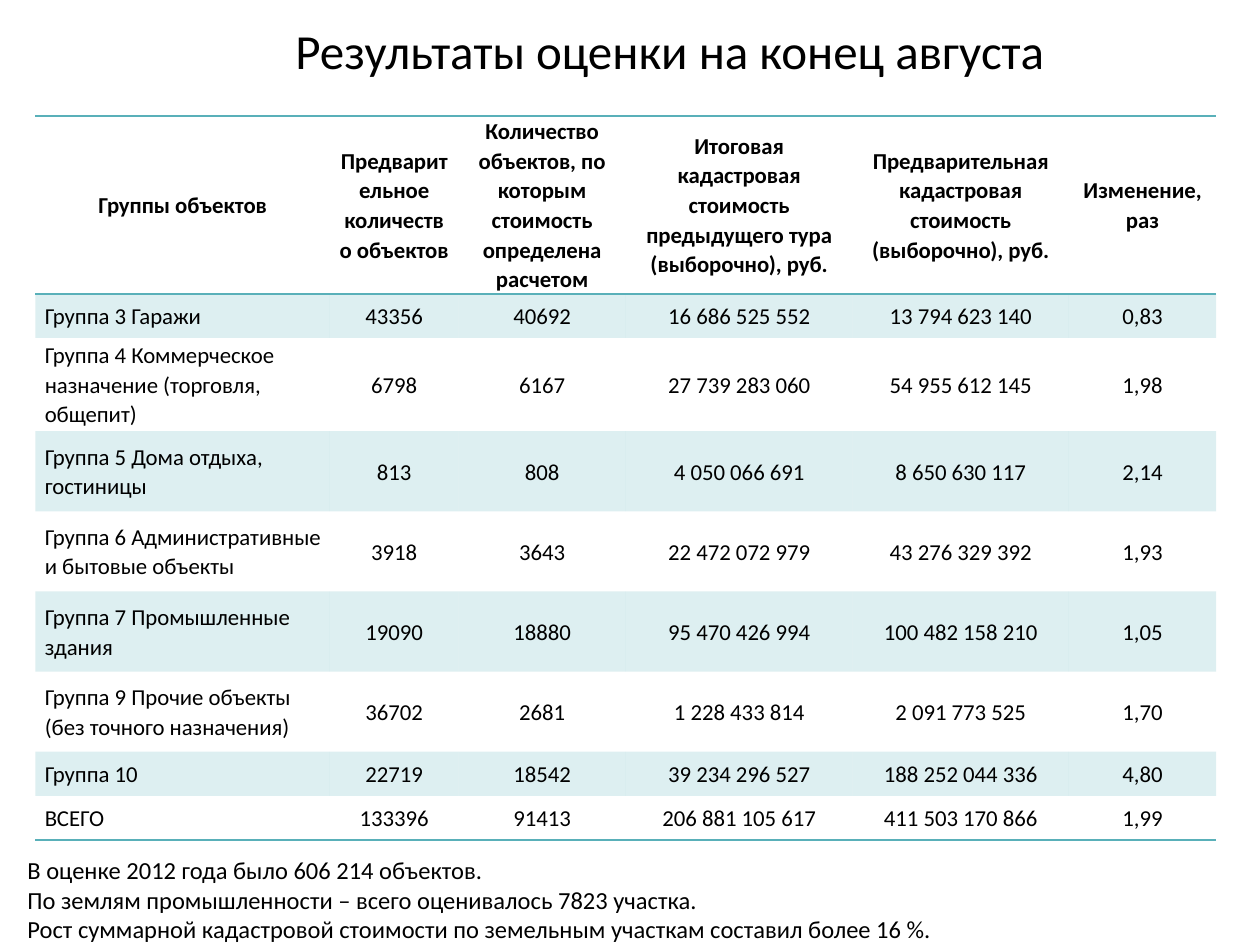
from lxml import etree
from pptx import Presentation
from pptx.dml.color import RGBColor
from pptx.enum.text import MSO_ANCHOR, MSO_AUTO_SIZE, PP_ALIGN
from pptx.oxml.ns import qn
from pptx.util import Pt

BLACK = RGBColor(0x00, 0x00, 0x00)
TEAL = RGBColor(0x59, 0xB0, 0xB9)
LEFT, CENTER = PP_ALIGN.LEFT, PP_ALIGN.CENTER
TOP, MIDDLE = MSO_ANCHOR.TOP, MSO_ANCHOR.MIDDLE
GROW = MSO_AUTO_SIZE.SHAPE_TO_FIT_TEXT
FONT = "Calibri"
PLAIN = "{2D5ABB26-0587-4C30-8999-92F81FD0307C}"  # no style, no grid

TITLE = "Результаты оценки на конец августа"
WIDTHS = [168.3, 73.4, 95.7, 129.5, 123.7, 84.2]
HEIGHTS = [96.5, 25.2, 53.3, 45.8, 45.8, 45.8, 45.8, 25.2, 25.2]
ROWS = [
    ["Группы объектов", "Предварительное количество объектов",
     "Количество объектов, по которым стоимость определена расчетом",
     "Итоговая кадастровая стоимость предыдущего тура (выборочно), руб.",
     "Предварительная кадастровая стоимость (выборочно), руб.",
     "Изменение, раз"],
    ["Группа 3 Гаражи", "43356", "40692",
     "16 686 525 552", "13 794 623 140", "0,83"],
    ["Группа 4 Коммерческое назначение (торговля, общепит)", "6798", "6167",
     "27 739 283 060", "54 955 612 145", "1,98"],
    ["Группа 5 Дома отдыха, гостиницы", "813", "808",
     "4 050 066 691", "8 650 630 117", "2,14"],
    ["Группа 6 Административные и бытовые объекты", "3918", "3643",
     "22 472 072 979", "43 276 329 392", "1,93"],
    ["Группа 7 Промышленные здания", "19090", "18880",
     "95 470 426 994", "100 482 158 210", "1,05"],
    ["Группа 9 Прочие объекты (без точного назначения)", "36702", "2681",
     "1 228 433 814", "2 091 773 525", "1,70"],
    ["Группа 10", "22719", "18542",
     "39 234 296 527", "188 252 044 336", "4,80"],
    ["ВСЕГО", "133396", "91413",
     "206 881 105 617", "411 503 170 866", "1,99"],
]
NOTES = [
    "В оценке 2012 года было 606 214 объектов.",
    "По землям промышленности – всего оценивалось 7823 участка.",
    "Рост суммарной кадастровой стоимости по земельным участкам "
    "составил более 16 %.",
]


def style(par, size, align, bold=False):
    par.alignment = align
    font = par.font
    font.name, font.size, font.bold = FONT, Pt(size), bold
    font.color.rgb = BLACK


def add_text(slide, area, lines, size, align):
    box = slide.shapes.add_textbox(*map(Pt, area))
    frame = box.text_frame
    frame.text = "\n".join(lines)
    for par in frame.paragraphs:
        style(par, size, align)
    return frame


def add_edges(cell, tags):
    """Draw teal lines on the given sides; tags are lnT and lnB in order."""
    props = cell._tc.get_or_add_tcPr()
    for spot, tag in enumerate(tags):
        line = etree.Element(qn("a:" + tag), w=str(Pt(1)))
        fill = etree.SubElement(line, qn("a:solidFill"))
        etree.SubElement(fill, qn("a:srgbClr"), val=str(TEAL))
        props.insert(spot, line)


def tint(cell):
    """Fill the cell with teal at 20 % opacity."""
    cell.fill.solid()
    cell.fill.fore_color.rgb = TEAL
    color = cell._tc.tcPr.find(".//" + qn("a:srgbClr"))
    etree.SubElement(color, qn("a:alpha"), val="20000")


def fill_cell(cell, text, row, col):
    head, last = row == 0, row == len(ROWS) - 1
    cell.text = text
    cell.vertical_anchor = MIDDLE
    cell.margin_left = cell.margin_right = Pt(5.4)
    cell.margin_top = cell.margin_bottom = 0
    par = cell.text_frame.paragraphs[0]
    par.line_spacing = 1.07
    style(par, 13, CENTER if head or col else LEFT, head)
    if row % 2:
        tint(cell)
    else:
        cell.fill.background()
    if head:
        add_edges(cell, ["lnT", "lnB"])
    elif last:
        add_edges(cell, ["lnB"])


def add_grid(slide):
    frame = slide.shapes.add_table(
        len(ROWS), len(WIDTHS), Pt(20.2), Pt(66.2),
        Pt(sum(WIDTHS)), Pt(sum(HEIGHTS)))
    table = frame.table
    table.first_row = table.horz_banding = False
    table._tbl.tblPr.find(qn("a:tableStyleId")).text = PLAIN
    for col, width in zip(table.columns, WIDTHS):
        col.width = Pt(width)
    for row, height in zip(table.rows, HEIGHTS):
        row.height = Pt(height)
    for row, texts in enumerate(ROWS):
        for col, text in enumerate(texts):
            fill_cell(table.cell(row, col), text, row, col)


def main():
    deck = Presentation()
    deck.slide_width, deck.slide_height = Pt(720), Pt(540)
    slide = deck.slides.add_slide(deck.slide_layouts[6])
    add_grid(slide)
    title = add_text(slide, (70.6, 0.7, 624.2, 90), [TITLE], 28, CENTER)
    title.word_wrap = True
    title.vertical_anchor = TOP
    title.margin_top = Pt(11)
    notes = add_text(slide, (8.6, 485.3, 535, 58), NOTES, 14, LEFT)
    notes.word_wrap = False
    notes.auto_size = GROW
    deck.save("out.pptx")


if __name__ == "__main__":
    main()
